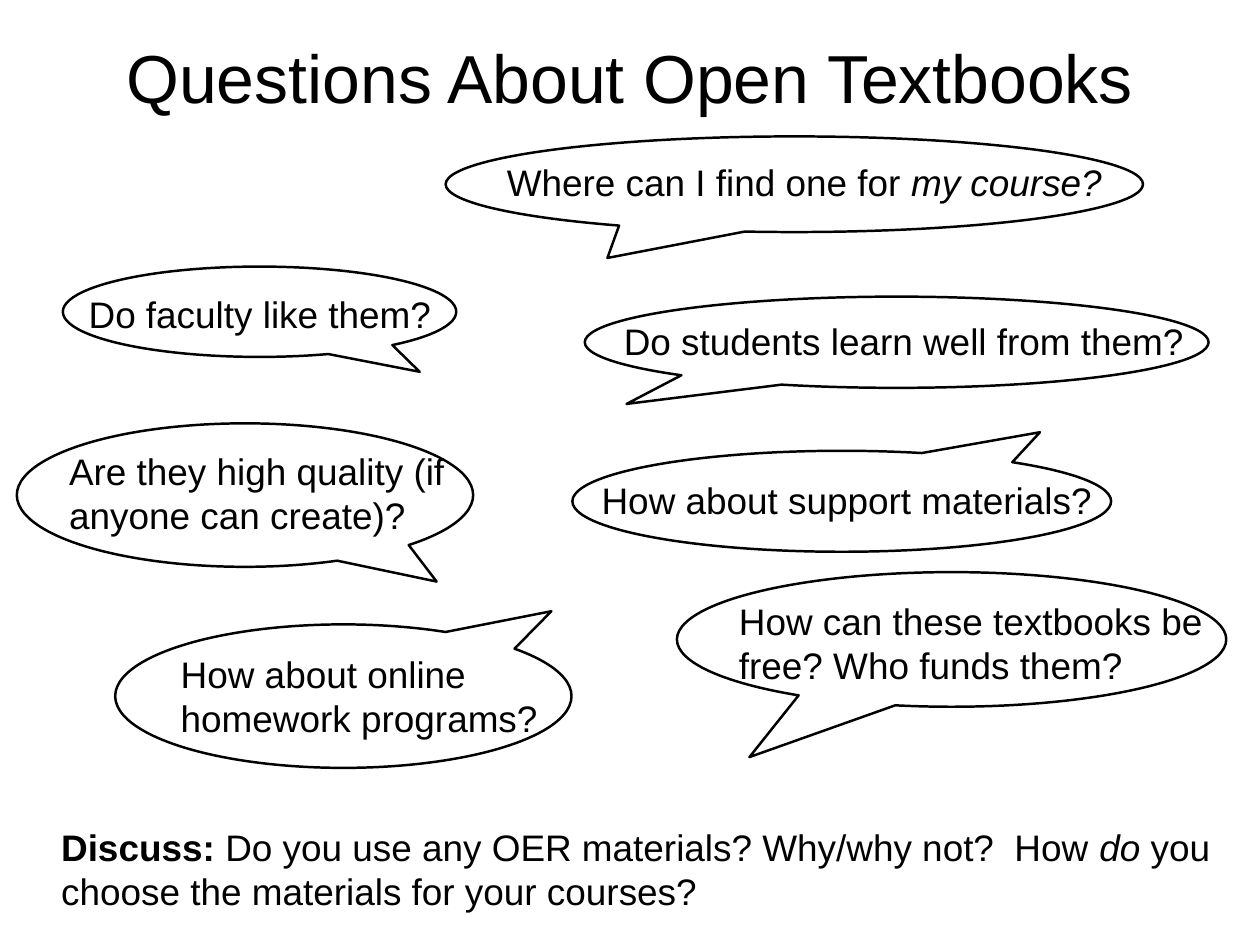
from pptx import Presentation
from pptx.dml.color import RGBColor
from pptx.enum.shapes import MSO_SHAPE
from pptx.enum.text import MSO_ANCHOR, PP_ALIGN
from pptx.util import Inches, Pt

BUBBLES = [
    ((5.03, 1.54, 7.87, 1.08), (-0.268, 0.771)),
    ((0.71, 3.01, 4.44, 1.02), (0.407, 0.665)),
    ((6.6, 3.35, 7.04, 1.03), (-0.433, 0.676)),
    ((0.19, 4.78, 5.15, 1.62), (0.42, 0.603)),
    ((1.3, 7.05, 5.15, 1.62), (0.456, -0.592)),
    ((6.46, 5.09, 6.08, 1.14), (0.368, -0.684)),
    ((7.64, 6.46, 6.2, 1.52), (-0.368, 0.874)),
]

QUESTIONS = [
    ((5.66, 1.53, 6.95, 1.04), True,
     [("Where can I find one for ", {}), ("my course?", {"italic": True})]),
    ((8.28, 6.5, 5.9, 1.51), True,
     [("How can these textbooks be free? Who funds them?", {})]),
    ((6.98, 3.33, 6.45, 1.04), False, [("Do students learn well from them?", {})]),
    ((0.94, 3.02, 3.99, 1.04), False, [("Do faculty like them?", {})]),
    ((6.73, 5.12, 5.66, 1.04), False, [("How about support materials?", {})]),
    ((1.98, 7.1, 4.7, 1.51), True, [("How about online homework programs?", {})]),
    ((0.72, 4.81, 4.36, 1.51), True,
     [("Are they high quality (if anyone can create)?", {})]),
]

DISCUSSION = [
    ("Discuss: ", {"bold": True}),
    ("Do you use any OER materials? Why/why not?  How ", {}),
    ("do ", {"italic": True}),
    ("you choose the materials for your courses?", {}),
]


def color(value):
    return RGBColor.from_string(value)


def add_text(paragraph, text, size=30, font="Arial", fill="000000", bold=False, italic=False):
    run = paragraph.add_run()
    run.text = text
    run.font.size = Pt(size)
    run.font.name = font
    run.font.color.rgb = color(fill)
    run.font.bold = bold
    run.font.italic = italic


class SlideBuilder:
    ink = "000000"
    line_width = 2
    inset = 0.06

    def __init__(self, slide):
        self.slide = slide

    def text_box(self, box, runs, wrap=True, align=PP_ALIGN.LEFT):
        shape = self.slide.shapes.add_textbox(*map(Inches, box))
        frame = shape.text_frame
        frame.word_wrap = wrap
        frame.vertical_anchor = MSO_ANCHOR.MIDDLE
        frame.margin_left = frame.margin_right = Inches(self.inset)
        frame.margin_top = frame.margin_bottom = Inches(self.inset)
        paragraph = frame.paragraphs[0]
        paragraph.alignment = align
        for text, style in runs:
            add_text(paragraph, text, fill=self.ink, **style)

    def bubble(self, box, tail):
        shape = self.slide.shapes.add_shape(MSO_SHAPE.OVAL_CALLOUT, *map(Inches, box))
        shape.adjustments[0], shape.adjustments[1] = tail
        shape.shadow.inherit = False
        shape.fill.background()
        shape.line.color.rgb = color(self.ink)
        shape.line.width = Pt(self.line_width)


def main():
    presentation = Presentation()
    presentation.slide_width = Inches(14.22)
    presentation.slide_height = Inches(10.67)
    slide = presentation.slides.add_slide(presentation.slide_layouts[6])
    builder = SlideBuilder(slide)
    builder.text_box((1.04, 0.28, 12.14, 1.16),
                     [("Questions About Open Textbooks", {"size": 55.2})],
                     align=PP_ALIGN.CENTER)
    builder.text_box((0.63, 9.23, 13.25, 1.16), DISCUSSION)
    for box, wrap, runs in QUESTIONS:
        builder.text_box(box, runs, wrap)
    for box, tail in BUBBLES:
        builder.bubble(box, tail)
    presentation.save("out.pptx")


if __name__ == "__main__":
    main()
